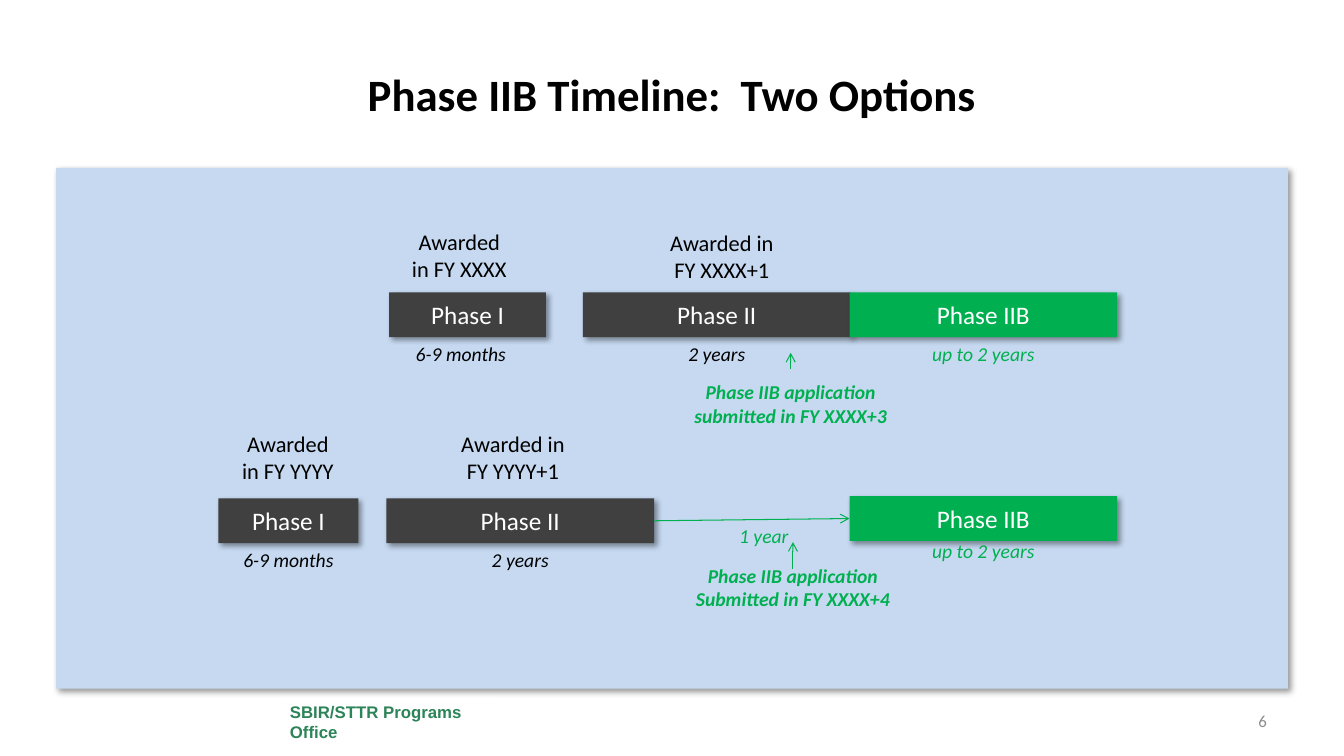
import pptx
import pptx.util
import pptx.dml.color
import pptx.enum.shapes
import pptx.enum.text
import pptx.oxml
import pptx.oxml.ns

RGBColor = pptx.dml.color.RGBColor
BLACK = RGBColor(0x00, 0x00, 0x00)
WHITE = RGBColor(0xFF, 0xFF, 0xFF)
GRAY = RGBColor(0x8C, 0x8C, 0x8C)
DARK = RGBColor(0x40, 0x40, 0x40)
SKY = RGBColor(0xC6, 0xD9, 0xF1)
GREEN = RGBColor(0x00, 0xB0, 0x50)
PINE = RGBColor(0x2C, 0x84, 0x58)

ALIGN = pptx.enum.text.PP_ALIGN
MIDDLE = pptx.enum.text.MSO_ANCHOR.MIDDLE
RECT = pptx.enum.shapes.MSO_SHAPE.RECTANGLE
LINE = pptx.enum.shapes.MSO_CONNECTOR.STRAIGHT

# The grid has 120 columns and 67.5 rows of equal size.
WIDE, HIGH = pptx.util.Inches(13.33), pptx.util.Inches(7.5)
COL, ROW = WIDE / 120, HIGH / 67.5
BAR, CAP = 4, 3

SHADOW = (
    '<a:outerShdw %s blurRad="50800" dist="38100" dir="2700000" algn="tl" rotWithShape="0">'
    '<a:srgbClr val="000000"><a:alpha val="40000"/></a:srgbClr></a:outerShdw>'
    % pptx.oxml.ns.nsdecls("a"))


def place(box):
    """Turn grid units (left, top, width, height) into lengths."""
    x, y, w, h = box
    return round(x * COL), round(y * ROW), round(w * COL), round(h * ROW)


def write(frame, lines, size, color, align=ALIGN.CENTER, bold=False, italic=False, face="Calibri"):
    frame.word_wrap = True
    for i, line in enumerate(lines):
        para = frame.add_paragraph() if i else frame.paragraphs[0]
        para.alignment = align
        run = para.add_run()
        run.text = line
        font = run.font
        font.name, font.size = face, pptx.util.Pt(size)
        font.bold, font.italic = bold, italic
        font.color.rgb = color


def label(slide, box, lines, size, color, **style):
    text = slide.shapes.add_textbox(*place(box))
    write(text.text_frame, lines, size, color, **style)
    return text


def block(slide, box, fill, shade=True):
    """Add a rectangle without outline."""
    rect = slide.shapes.add_shape(RECT, *place(box))
    rect.fill.solid()
    rect.fill.fore_color.rgb = fill
    rect.line.fill.background()
    rect.shadow.inherit = False
    if shade:
        effect = rect._element.spPr.find(pptx.oxml.ns.qn("a:effectLst"))
        effect.append(pptx.oxml.parse_xml(SHADOW))
    rect.text_frame.vertical_anchor = MIDDLE
    return rect


def arrow(slide, x, y, x2, y2):
    link = slide.shapes.add_connector(LINE, *place((x, y, x2, y2)))
    link.line.color.rgb = GREEN
    link.line.width = pptx.util.Pt(0.75)
    props = link._element.spPr
    for root, xml in ((link.line._get_or_add_ln(), '<a:tailEnd %s type="arrow"/>'),
                      (props, "<a:effectLst %s/>")):
        root.append(pptx.oxml.parse_xml(xml % pptx.oxml.ns.nsdecls("a")))
    return link


def phase(slide, box, name, fill, span, shift=0, drop=0):
    """Add a phase bar with its length of time below."""
    x, y, w, h = box
    bar = block(slide, box, fill)
    write(bar.text_frame, [name], 18, WHITE)
    color = BLACK if fill == DARK else GREEN
    label(slide, (x + w / 2 - 5.9 + shift, y + h + drop, 11.8, CAP), [span], 14, color, italic=True)
    return bar


def award(slide, mid, top, width, year):
    label(slide, (mid - width / 2, top, width, 5.8), ["Awarded in FY " + year], 16, BLACK)


def note(slide, box, lines, start, end):
    """Add an application note; its arrow runs between rows counted from the top."""
    x, y, w, h = box
    mid = x + w / 2
    arrow(slide, mid, y + start, mid, y + end)
    label(slide, box, lines, 14, GREEN, bold=True, italic=True)


def direct(slide, box):
    """First option: Phase IIB follows at once."""
    x, y, w, h = box
    phase(slide, (x, y, 14, BAR), "Phase I", DARK, "6-9 months", shift=-0.6)
    phase(slide, (x + 17.3, y, 23.9, BAR), "Phase II", DARK, "2 years")
    phase(slide, (x + w - 23.9, y, 23.9, BAR), "Phase IIB", GREEN, "up to 2 years")
    award(slide, x + 6.25, y - 6.2, 10.5, "XXXX")
    award(slide, x + 29.7, y - 6.1, 12.8, "XXXX+1")
    note(slide, (x + 25.85, y + 7.4, 20, 5.1),
         ["Phase IIB application submitted in FY XXXX+3"], -0.55, -2)


def delayed(slide, box):
    """Second option: Phase IIB follows after a year."""
    x, y, w, h = box
    phase(slide, (x, y, 12.5, BAR), "Phase I", DARK, "6-9 months")
    second = phase(slide, (x + 15, y, 23.9, BAR), "Phase II", DARK, "2 years")
    third = phase(slide, (x + w - 23.9, y - 0.2, 23.9, BAR), "Phase IIB", GREEN,
                  "up to 2 years", drop=-0.6)
    award(slide, x + 6.2, y - 6.5, 10.5, "YYYY")
    award(slide, x + 26.3, y - 6.5, 11.2, "YYYY+1")
    gap = arrow(slide, x + 38.9, y + 2, x + w - 23.9, y + 1.8)
    gap.begin_connect(second, 3)
    gap.end_connect(third, 1)
    label(slide, (x + 42.8, y + 1.8, 11.8, CAP), ["1 year"], 14, GREEN, italic=True)
    note(slide, (x + 41.3, y + 5.4, 20, 5.1),
         ["Phase IIB application", "Submitted in FY XXXX+4"], 0.9, -1.5)


def head(slide, box):
    title = slide.shapes.title
    title.left, title.top, title.width, title.height = place(box)
    title.text_frame.vertical_anchor = MIDDLE
    write(title.text_frame, ["Phase IIB Timeline:  Two Options"], 32, BLACK, bold=True)


def foot(slide, box):
    x, y, w, h = box
    office = block(slide, (x, y, 19, h), WHITE, shade=False)
    write(office.text_frame, ["SBIR/STTR Programs Office"], 12, PINE,
          align=ALIGN.LEFT, bold=True, face="Arial")
    page = label(slide, (x + w - 19, y + 0.25, 19, 3.6), ["6"], 12, GRAY, align=ALIGN.RIGHT)
    page.text_frame.vertical_anchor = MIDDLE


def main():
    deck = pptx.Presentation()
    deck.slide_width, deck.slide_height = WIDE, HIGH
    slide = deck.slides.add_slide(deck.slide_layouts[5])
    block(slide, (5, 15, 110, 46.5), SKY)
    head(slide, (6, 2.7, 108, 11.25))
    direct(slide, (34.75, 26.1, 65, 16))
    delayed(slide, (19.5, 44.5, 80.25, 12))
    foot(slide, (25, 62.3, 89, 4.3))
    deck.save("out.pptx")


if __name__ == "__main__":
    main()
